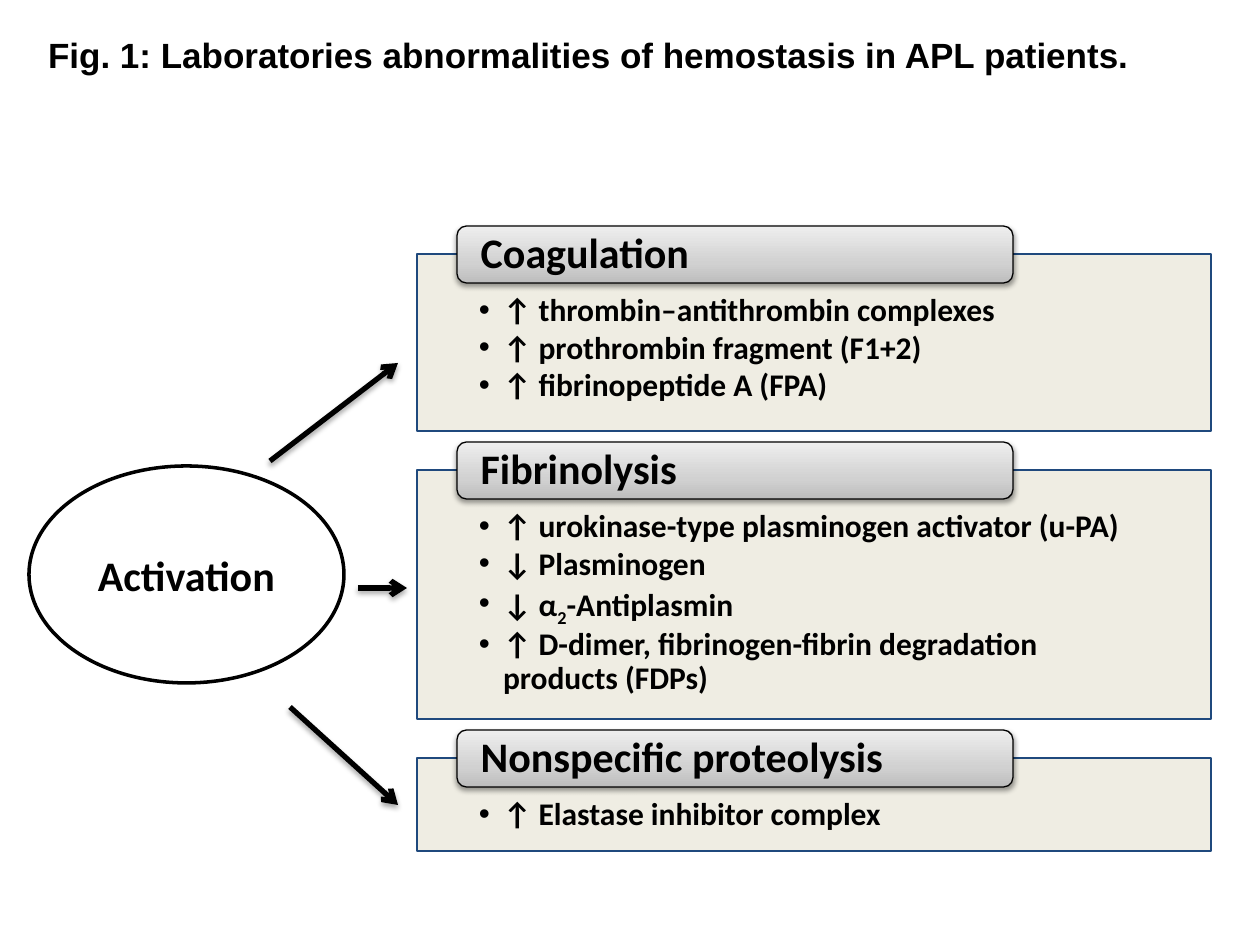
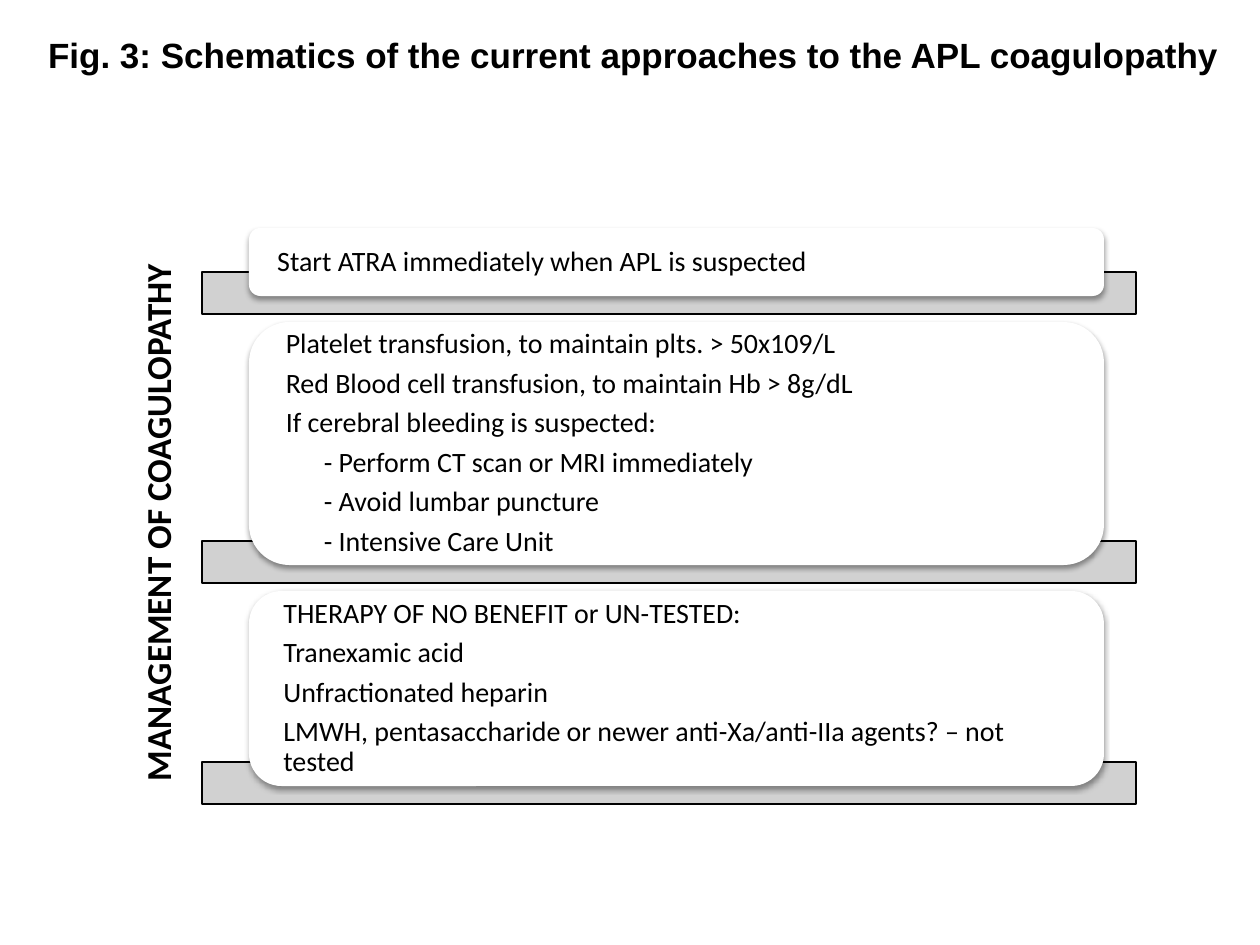
from copy import deepcopy
from lxml.etree import SubElement
from pptx import Presentation
from pptx.dml.color import RGBColor
from pptx.enum.shapes import MSO_CONNECTOR, MSO_SHAPE
from pptx.enum.text import MSO_ANCHOR, MSO_AUTO_SIZE, PP_ALIGN
from pptx.oxml.ns import qn
from pptx.util import Inches, Pt

SCALE = Inches(1) / 126
BLACK = RGBColor(0x00, 0x00, 0x00)
WHITE = RGBColor(0xFF, 0xFF, 0xFF)
CREAM = RGBColor(0xEE, 0xEC, 0xE1)
NAVY = RGBColor(0x1F, 0x49, 0x7D)
GRAY = RGBColor(0xCC, 0xCC, 0xCC)
RAMP = [
    (0, RGBColor(0xBD, 0xBD, 0xBD)),
    (0.35, RGBColor(0xD1, 0xD1, 0xD1)),
    (1, RGBColor(0xEE, 0xEE, 0xEE)),
]

PANELS = [
    ("Coagulation", 177, [
        "↑ thrombin–antithrombin complexes",
        "↑ prothrombin fragment (F1+2)",
        "↑ fibrinopeptide A (FPA)",
    ]),
    ("Fibrinolysis", 249, [
        "↑ urokinase-type plasminogen activator (u-PA)",
        "↓ Plasminogen",
        "↓ α_2_-Antiplasmin",
        "↑ D-dimer, fibrinogen-fibrin degradation products (FDPs)",
    ]),
    ("Nonspecific proteolysis", 93, ["↑ Elastase inhibitor complex"]),
]
ARROWS = [
    (270, 461, 398, 363),
    (358, 588, 407, 588),
    (290, 707, 398, 805),
]
CARDS = [
    (68, ["Start ATRA immediately when APL is suspected"]),
    (243, [
        "Platelet transfusion, to maintain plts. > 50x109/L",
        "Red Blood cell transfusion, to maintain Hb > 8g/dL",
        "If cerebral bleeding is suspected:",
        "- Perform CT scan or MRI immediately",
        "- Avoid lumbar puncture",
        "- Intensive Care Unit",
    ]),
    (195, [
        "THERAPY OF NO BENEFIT or UN-TESTED:",
        "Tranexamic acid",
        "Unfractionated heparin",
        "LMWH, pentasaccharide or newer anti-Xa/anti-IIa agents? – not tested",
    ]),
]


def px(*nums):
    """Turn pixel lengths into a list of EMU."""
    return [round(num * SCALE) for num in nums]


def place(shape, *box):
    """Move and size a shape."""
    shape.left, shape.top, shape.width, shape.height = px(*box)


def write(shape, lines, size=18, font="Calibri", bold=True, align=PP_ALIGN.LEFT,
          anchor=MSO_ANCHOR.MIDDLE, pad=(13, 6, 13, 6), lead=1.0, after=0,
          bullet=False, wrap=True):
    """Write lines into a shape; text between underscores is subscript."""
    frame = shape.text_frame
    frame.auto_size = MSO_AUTO_SIZE.NONE
    frame.word_wrap = wrap
    frame.vertical_anchor = anchor
    (frame.margin_left, frame.margin_top,
     frame.margin_right, frame.margin_bottom) = px(*pad)
    for row, line in enumerate(lines):
        para = frame.add_paragraph() if row else frame.paragraphs[0]
        para.alignment = align
        para.line_spacing = lead
        para.space_before = Pt(0)
        para.space_after = Pt(after)
        indent(para, bullet, line.startswith("- "))
        for part, text in enumerate(line.split("_")):
            run = para.add_run()
            run.text = text
            run.font.size = Pt(size)
            run.font.name = font
            run.font.bold = bold
            run.font.color.rgb = BLACK
            if part % 2:
                run.font._element.set("baseline", "-25000")


def indent(para, bullet, inset):
    """Set the indent of a paragraph and its bullet, if any."""
    props = para._p.get_or_add_pPr()
    left, hang = px(24, -24) if bullet else px(38 if inset else 0, 0)
    props.set("marL", str(left))
    props.set("indent", str(hang))
    if bullet:
        SubElement(props, qn("a:buChar"), char="•")


def paint(shape, fill, line=None, width=0.75, alpha=100):
    """Set the fill, its opacity and the line of a shape."""
    shape.fill.solid()
    shape.fill.fore_color.rgb = fill
    if alpha < 100:
        color = shape._element.spPr.find(qn("a:solidFill"))[0]
        SubElement(color, qn("a:alpha"), val=str(alpha * 1000))
    if line is None:
        shape.line.fill.background()
    else:
        shape.line.color.rgb = line
        shape.line.width = Pt(width)


def shade(effects, dist=1.6, alpha=38):
    """Add a soft shadow below to an effect list."""
    drop = SubElement(effects, qn("a:outerShdw"), blurRad=str(Pt(3.1)),
                      dist=str(Pt(dist)), dir="5400000", rotWithShape="0")
    color = SubElement(drop, qn("a:srgbClr"), val=str(BLACK))
    SubElement(color, qn("a:alpha"), val=str(alpha * 1000))


def draw(slide, kind, box, fill, shadow=False, **style):
    """Add a painted preset shape, with or without a shadow."""
    shape = slide.shapes.add_shape(kind, *px(*box))
    paint(shape, fill, **style)
    shape.shadow.inherit = False
    if shadow:
        shade(shape._element.spPr.find(qn("a:effectLst")))
    return shape


def blend(shape):
    """Fill a shape with the gray ramp, dark at the bottom."""
    shape.fill.gradient()
    shape.fill.gradient_angle = 90
    stops = shape._element.spPr.find(".//" + qn("a:gsLst"))
    stops.append(deepcopy(stops[0]))
    for stop, (spot, color) in zip(shape.fill.gradient_stops, RAMP):
        stop.position = spot
        stop.color.rgb = color


def arrow(slide, *ends):
    """Add a thick arrow with a shadow."""
    link = slide.shapes.add_connector(MSO_CONNECTOR.STRAIGHT, *px(*ends))
    link.line.color.rgb = BLACK
    link.line.width = Pt(3)
    props = link._element.spPr
    SubElement(props.find(qn("a:ln")), qn("a:tailEnd"), type="arrow")
    shade(SubElement(props, qn("a:effectLst")), dist=1.8, alpha=35)


def start(deck, layout, title):
    """Add a slide with its figure title."""
    slide = deck.slides.add_slide(deck.slide_layouts.get_by_name(layout))
    place(slide.shapes.title, 35, 26, 1216, 56)
    write(slide.shapes.title, [title], size=20, font="Arial")
    return slide


def panel(slide, body, top, high, head, lines):
    """Fill a body placeholder as a list panel under a heading tab."""
    place(body, 417, top, 794, high)
    paint(body, CREAM, line=NAVY, alpha=90)
    write(body, lines, anchor=MSO_ANCHOR.TOP, pad=(62, 40, 62, 18),
          lead=0.9, after=2.2, bullet=True)
    tab = draw(slide, MSO_SHAPE.ROUNDED_RECTANGLE, (457, top - 28, 556, 57),
               WHITE, shadow=True, line=BLACK)
    blend(tab)
    write(tab, [head], size=24, pad=(21, 0, 21, 0), lead=0.9)


def card(slide, top, high, lines):
    """Add a white card that stands on a gray bar."""
    draw(slide, MSO_SHAPE.RECTANGLE, (202, top + high - 24, 934, 42), GRAY,
         line=BLACK, alpha=90)
    face = draw(slide, MSO_SHAPE.ROUNDED_RECTANGLE, (249, top, 855, high),
                WHITE, shadow=True)
    write(face, lines, size=16, bold=False, pad=(25, 0, 25, 0),
          lead=0.9, after=5.3)


def causes(deck):
    """Build the slide on abnormalities of hemostasis."""
    slide = start(deck, "Comparison",
                  "Fig. 1: Laboratories abnormalities of hemostasis in APL patients.")
    *bodies, spare = list(slide.placeholders)[1:]
    spare._element.getparent().remove(spare._element)
    top = 254
    for body, (head, high, lines) in zip(bodies, PANELS):
        panel(slide, body, top, high, head, lines)
        top += high + 39
    oval = draw(slide, MSO_SHAPE.OVAL, (29, 466, 315, 217), WHITE,
                line=BLACK, width=2)
    write(oval, ["Activation"], size=24, align=PP_ALIGN.CENTER)
    for ends in ARROWS:
        arrow(slide, *ends)


def care(deck):
    """Build the slide on management of coagulopathy."""
    slide = start(deck, "Title Only",
                  "Fig. 3: Schematics of the current approaches to the APL coagulopathy")
    top = 228
    for high, lines in CARDS:
        card(slide, top, high, lines)
        top += high + 26
    side = slide.shapes.add_textbox(*px(123, 254, 68, 533))
    write(side, ["MANAGEMENT OF COAGULOPATHY"], size=20,
          anchor=MSO_ANCHOR.TOP, wrap=False)
    side.text_frame._txBody.bodyPr.set("vert", "vert270")


def main():
    """Build and save the deck."""
    deck = Presentation()
    deck.slide_width, deck.slide_height = px(1260, 945)
    causes(deck)
    care(deck)
    deck.save("out.pptx")


if __name__ == "__main__":
    main()
